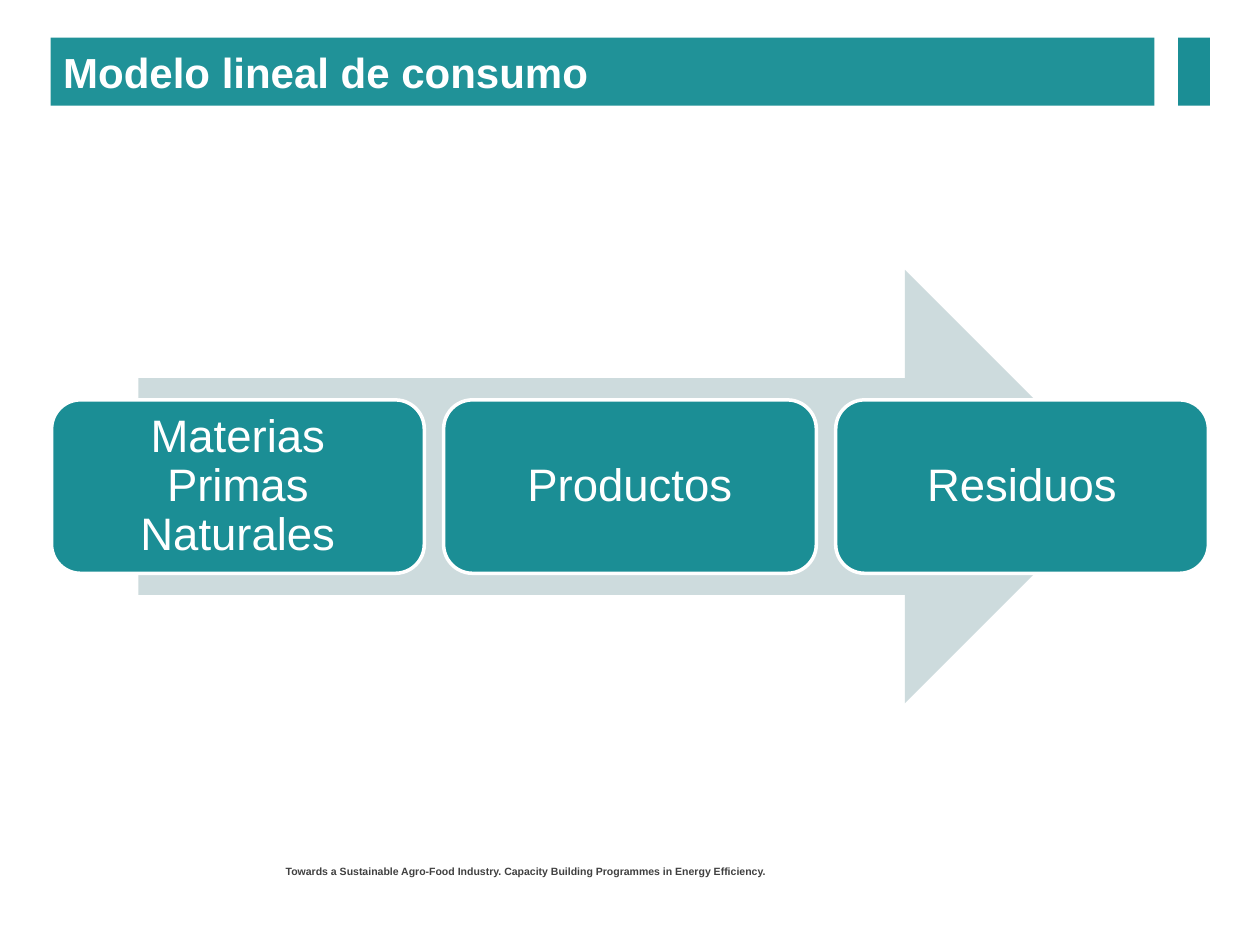
from pptx import Presentation
from pptx import util as u
from pptx.dml.color import RGBColor
from pptx.enum import shapes, text

TEAL = "1B8E95"
WHITE = "FFFFFF"


def paint(fill, colour):
    """Give a fill one solid colour."""
    fill.solid()
    fill.fore_color.rgb = RGBColor.from_string(colour)


def place(shape, left, top, width, height):
    """Set the position and size of a shape in centimetres."""
    shape.left, shape.top = u.Cm(left), u.Cm(top)
    shape.width, shape.height = u.Cm(width), u.Cm(height)


def add_block(page, kind, box, colour):
    """Add a flat preset shape without outline or shadow."""
    block = page.shapes.add_shape(kind, *(u.Cm(length) for length in box))
    block.shadow.inherit = False
    paint(block.fill, colour)
    block.line.fill.background()
    return block


def write(frame, wording, size, colour, bold=False, align=text.PP_ALIGN.LEFT):
    """Write one styled paragraph into a text frame."""
    frame.word_wrap = True
    frame.auto_size = text.MSO_AUTO_SIZE.NONE
    para = frame.paragraphs[0]
    para.text = wording
    para.alignment = align
    para.font.name = "Arial"
    para.font.size = u.Pt(size)
    para.font.bold = bold
    para.font.color.rgb = RGBColor.from_string(colour)
    return para


def add_header(page, left, top, width, height, wording):
    """Lay out the title band and the narrow marker at its right."""
    marker_width, gap = 0.64, 0.48
    title = page.shapes.title
    place(title, left, top, width - marker_width - gap, height)
    paint(title.fill, "209298")
    title.text_frame.vertical_anchor = text.MSO_ANCHOR.MIDDLE
    write(title.text_frame, wording, 24, WHITE, bold=True)
    marker = (left + width - marker_width, top, marker_width, height)
    add_block(page, shapes.MSO_SHAPE.RECTANGLE, marker, TEAL)


def add_process(page, left, top, width, height, stages):
    """Lay out equal stages in a row over a wide arrow."""
    arrow_width = 0.85 * width
    arrow = (left + (width - arrow_width) / 2, top, arrow_width, height)
    add_block(page, shapes.MSO_SHAPE.RIGHT_ARROW, arrow, "CDDBDD")

    gap = 0.39
    stage_width = (width - gap * (len(stages) - 1)) / len(stages)
    stage_height = 0.4 * height
    stage_top = top + (height - stage_height) / 2
    for index, wording in enumerate(stages):
        stage_left = left + index * (stage_width + gap)
        box = (stage_left, stage_top, stage_width, stage_height)
        stage = add_block(page, shapes.MSO_SHAPE.ROUNDED_RECTANGLE, box, TEAL)
        paint(stage.line.fill, WHITE)
        stage.line.width = u.Pt(2)
        frame = stage.text_frame
        frame.margin_left = frame.margin_right = u.Cm(0.28)
        frame.margin_top = frame.margin_bottom = u.Cm(0.28)
        frame.vertical_anchor = text.MSO_ANCHOR.MIDDLE
        para = write(frame, wording, 26, WHITE, align=text.PP_ALIGN.CENTER)
        para.line_spacing = 0.9


def add_footer(page, left, top, width, height, wording):
    """Add the small programme line at the foot of the page."""
    footer = page.shapes.add_textbox(*(u.Cm(n) for n in (left, top, width, height)))
    write(footer.text_frame, wording, 6, "404040", bold=True)


def main():
    """Build the deck and save it."""
    deck = Presentation()
    deck.slide_width, deck.slide_height = u.Cm(25.4), u.Cm(19.05)
    page = deck.slides.add_slide(deck.slide_layouts[5])
    add_footer(page, 5.51, 17.32, 13.97, 0.53,
               "Towards a Sustainable Agro-Food Industry. "
               "Capacity Building Programmes in Energy Efficiency.")
    add_header(page, 1.02, 0.76, 23.37, 1.37, "Modelo lineal de consumo")
    add_process(page, 1.04, 5.44, 23.32, 8.74,
                ["Materias Primas Naturales", "Productos", "Residuos"])
    deck.save("out.pptx")


if __name__ == "__main__":
    main()
